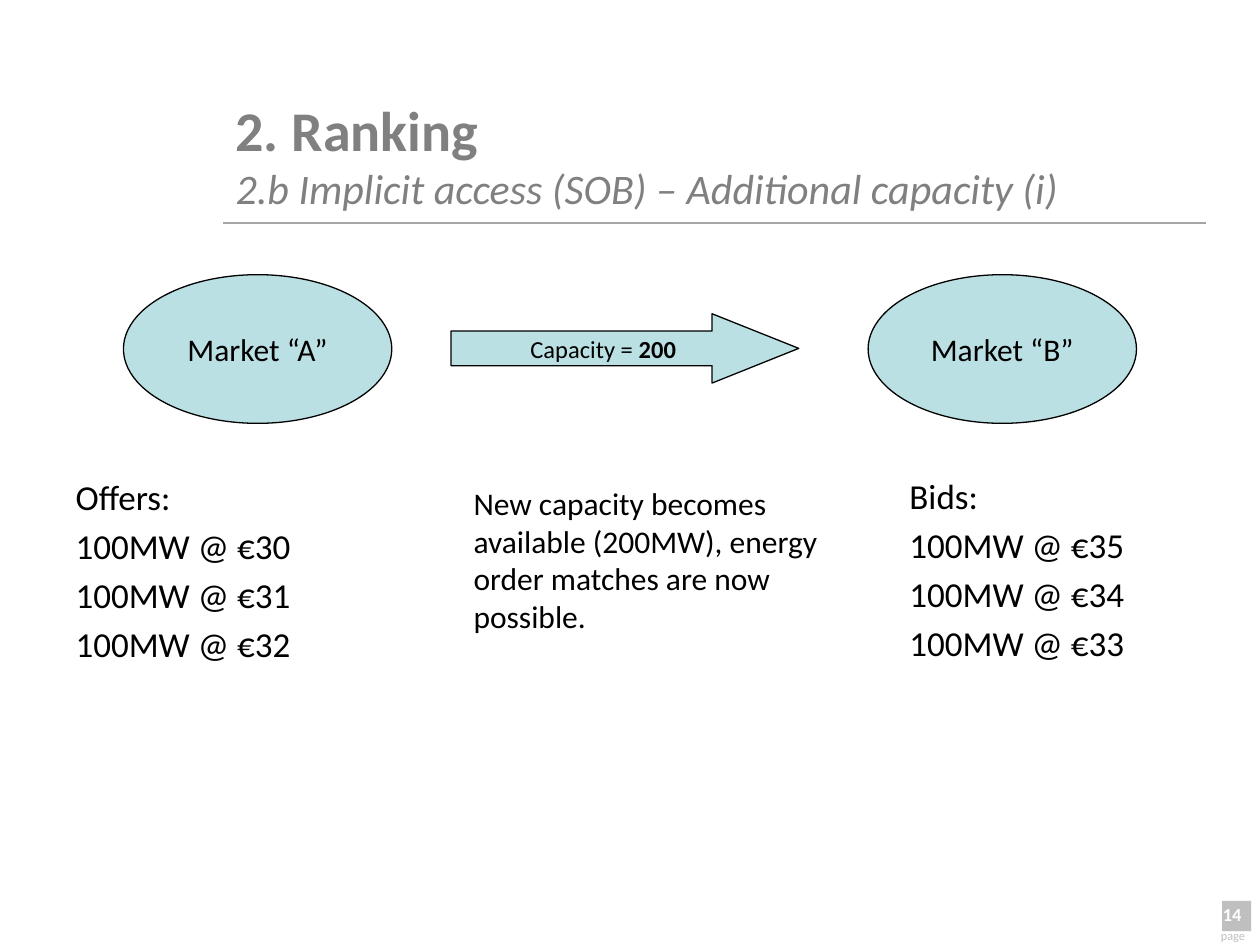
from dataclasses import dataclass

from lxml.etree import SubElement
from pptx import Presentation
from pptx.dml.color import RGBColor
from pptx.enum.shapes import MSO_CONNECTOR as Link, MSO_SHAPE as Kind
from pptx.enum.text import MSO_ANCHOR as Anchor, MSO_AUTO_SIZE as Fit, PP_ALIGN as Align
from pptx.oxml.ns import qn
from pptx.util import Pt

SCALE = 9144
FACE = "Calibri"
BLACK = RGBColor(0x00, 0x00, 0x00)
WHITE = RGBColor(0xFF, 0xFF, 0xFF)
TEAL = RGBColor(0xBB, 0xE0, 0xE3)
GRAY = RGBColor(0x80, 0x80, 0x80)
RULE = RGBColor(0xA6, 0xA6, 0xA6)
PALE = RGBColor(0xBF, 0xBF, 0xBF)


@dataclass(frozen=True)
class Box:
    x: int
    y: int
    w: int
    h: int

    def emu(self) -> tuple[int, ...]:
        return tuple(n * SCALE for n in (self.x, self.y, self.w, self.h))


@dataclass(frozen=True)
class Run:
    text: str
    size: float
    bold: bool = False
    italic: bool = False


@dataclass(frozen=True)
class Node:
    kind: Kind
    box: Box
    runs: tuple[Run, ...]


@dataclass(frozen=True)
class Orders:
    head: str
    prices: tuple[int, ...]


def style(font, size: float, color: RGBColor, bold: bool = False, italic: bool = False) -> None:
    font.name, font.size = FACE, Pt(size)
    font.bold, font.italic = bold, italic
    font.color.rgb = color


def add_runs(para, runs: tuple[Run, ...], color: RGBColor) -> None:
    for item in runs:
        run = para.add_run()
        run.text = item.text
        style(run.font, item.size, color, item.bold, item.italic)


def place(shape, box: Box) -> None:
    shape.left, shape.top, shape.width, shape.height = box.emu()


def add_shape(slide, kind: Kind, box: Box, fill: RGBColor):
    shape = slide.shapes.add_shape(kind, *box.emu())
    shape.shadow.inherit = False
    shape.fill.solid()
    shape.fill.fore_color.rgb = fill
    shape.line.fill.background()
    return shape


def add_node(slide, node: Node):
    shape = add_shape(slide, node.kind, node.box, TEAL)
    shape.line.color.rgb = BLACK
    shape.line.width = Pt(0.75)
    frame = shape.text_frame
    frame.word_wrap = False
    frame.vertical_anchor = Anchor.MIDDLE
    para = frame.paragraphs[0]
    para.alignment = Align.CENTER
    add_runs(para, node.runs, BLACK)
    return shape


def add_text(slide, box: Box, text: str, size: float, color: RGBColor,
             align: Align = Align.LEFT, bold: bool = False):
    frame = slide.shapes.add_textbox(*box.emu()).text_frame
    frame.word_wrap = True
    para = frame.paragraphs[0]
    para.text = text
    para.alignment = align
    style(para.font, size, color, bold)
    return frame


def fill_list(frame, orders: Orders) -> None:
    frame.word_wrap = True
    frame.auto_size = Fit.NONE
    lines = [orders.head] + [f"100MW @ €{price}" for price in orders.prices]
    for i, line in enumerate(lines):
        para = frame.add_paragraph() if i else frame.paragraphs[0]
        para.text = line
        para.space_before = Pt(4 if i else 0)
        props = para._p.get_or_add_pPr()
        props.set("marL", str(38 * SCALE))
        props.set("indent", str(-38 * SCALE))
        SubElement(props, qn("a:buNone"))
        style(para.font, 20, BLACK)


def add_title(slide) -> None:
    title = slide.shapes.title
    place(title, Box(177, 68, 823, 109))
    frame = title.text_frame
    frame.word_wrap = True
    frame.auto_size = Fit.NONE
    frame.vertical_anchor = Anchor.MIDDLE
    para = frame.paragraphs[0]
    para.alignment = Align.LEFT
    add_runs(para, (Run("2. Ranking", 32, bold=True),), GRAY)
    para.add_line_break()
    sub = Run("2.b Implicit access (SOB) – Additional capacity (i)", 24, italic=True)
    add_runs(para, (sub,), GRAY)


def add_rule(slide) -> None:
    rule = slide.shapes.add_connector(
        Link.STRAIGHT, *(n * SCALE for n in (177, 177, 957, 177)))
    rule.line.color.rgb = RULE
    rule.line.width = Pt(0.75)
    SubElement(rule._element.spPr, qn("a:effectLst"))


def add_page(slide) -> None:
    add_shape(slide, Kind.RECTANGLE, Box(970, 715, 23, 24), PALE)
    add_text(slide, Box(950, 712, 45, 27), "14", 10.5, WHITE, Align.RIGHT, True)
    frame = add_text(slide, Box(969, 740, 25, 5), "page", 7, PALE, Align.JUSTIFY)
    frame.vertical_anchor = Anchor.MIDDLE
    frame.margin_left = frame.margin_right = 0
    frame.margin_top = frame.margin_bottom = 0


def main() -> None:
    deck = Presentation()
    deck.slide_width, deck.slide_height = 1000 * SCALE, 750 * SCALE
    slide = deck.slides.add_slide(deck.slide_layouts[1])

    add_rule(slide)
    add_page(slide)
    add_title(slide)

    for name, x in (("A", 98), ("B", 689)):
        label = Run(f"Market “{name}”", 18)
        add_node(slide, Node(Kind.OVAL, Box(x, 218, 213, 118), (label,)))
    flow = (Run("Capacity = ", 14), Run("200", 14, bold=True))
    arrow = add_node(slide, Node(Kind.RIGHT_ARROW, Box(358, 249, 276, 55), flow))
    arrow.adjustments[0] = 0.5
    arrow.adjustments[1] = 1.25

    body = slide.placeholders[1]
    place(body, Box(50, 372, 395, 326))
    fill_list(body.text_frame, Orders("Offers:", (30, 31, 32)))
    bids = slide.shapes.add_textbox(*Box(712, 372, 277, 220).emu())
    fill_list(bids.text_frame, Orders("Bids:", (35, 34, 33)))
    add_text(slide, Box(366, 379, 331, 130),
             "New capacity becomes available (200MW), energy order matches are now possible.",
             18, BLACK)

    deck.save("out.pptx")


if __name__ == "__main__":
    main()
